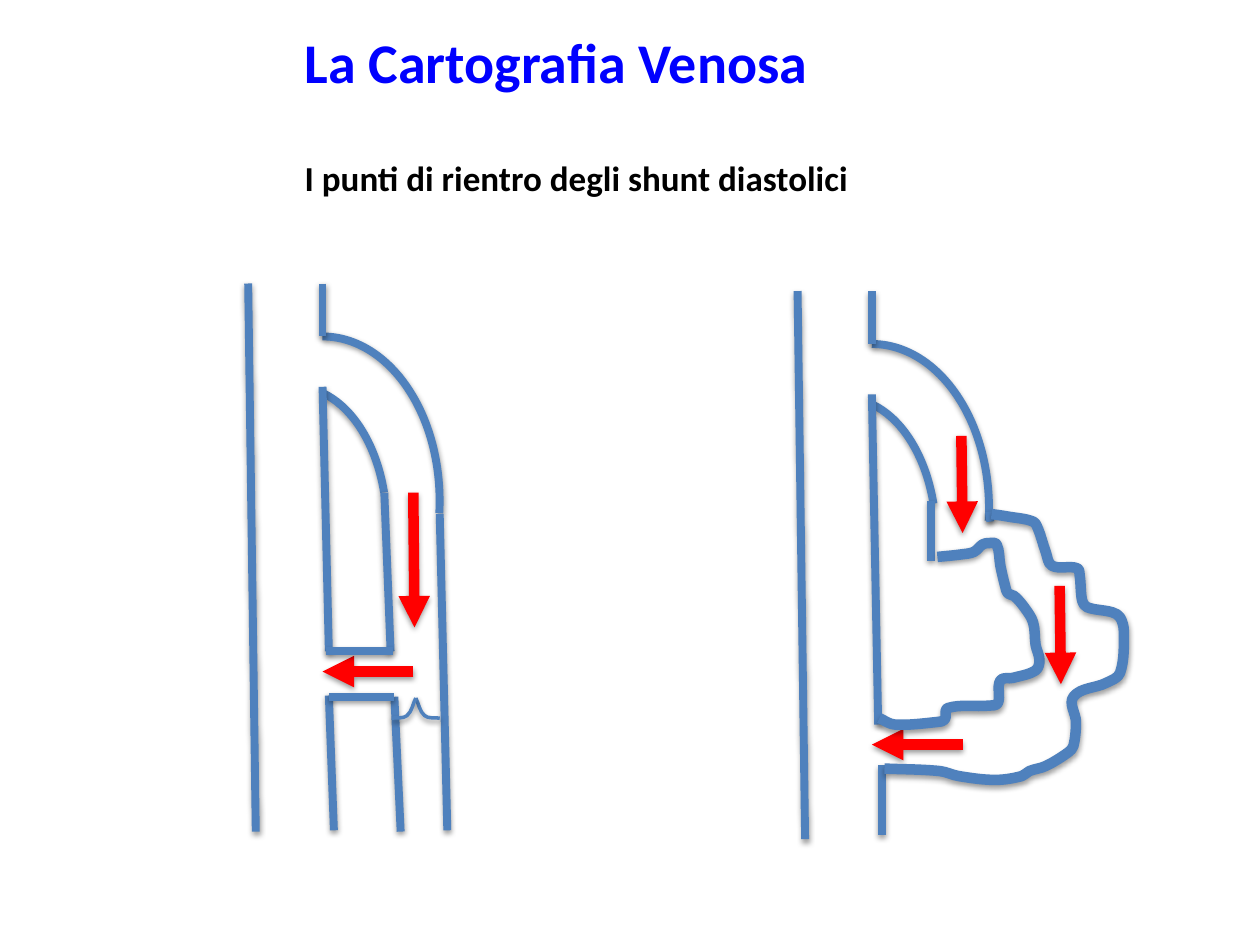
"""Build the slide on re-entry points of diastolic shunts in venous mapping."""
from dataclasses import dataclass
from itertools import chain
from math import dist
from typing import NamedTuple

from lxml import etree
from pptx import Presentation
from pptx.dml.color import RGBColor
from pptx.enum.shapes import MSO_CONNECTOR, MSO_SHAPE
from pptx.enum.text import MSO_AUTO_SIZE
from pptx.oxml import parse_xml
from pptx.oxml.ns import nsdecls, qn
from pptx.util import Inches, Pt

ARC = MSO_SHAPE.ARC
STRAIGHT = MSO_CONNECTOR.STRAIGHT
FIT_SHAPE = MSO_AUTO_SIZE.SHAPE_TO_FIT_TEXT
VEIN_BLUE = RGBColor(0x4F, 0x81, 0xBD)
FLOW_RED = RGBColor(0xFF, 0x00, 0x00)
TITLE_BLUE = RGBColor(0x00, 0x00, 0xFF)
BLACK = RGBColor(0x00, 0x00, 0x00)
WALL_WIDTH, THICK_WIDTH, VALVE_WIDTH = 4.5, 6, 2
SHADOW = (
    f'<a:effectLst {nsdecls("a")}><a:outerShdw blurRad="40000" dist="20000" '
    'dir="5400000" rotWithShape="0"><a:srgbClr val="000000">'
    '<a:alpha val="38000"/></a:srgbClr></a:outerShdw></a:effectLst>'
)


class Point(NamedTuple):
    x: float
    y: float


class Segment(NamedTuple):
    x1: float
    y1: float
    x2: float
    y2: float


@dataclass(frozen=True)
class Heading:
    text: str
    top: float
    width: float
    height: float
    size: int
    color: RGBColor


@dataclass(frozen=True)
class DeepVein:
    """A deep vein whose side branch leaves by an arch and re-enters lower down."""
    left: float
    top: float
    inner_arch_drop: float
    reentry_top: float
    lower_wall: Segment


HEADING_LEFT = 2.32
HEADINGS = [
    Heading("La Cartografia Venosa", 0.17, 4.27, 0.64, 32, TITLE_BLUE),
    Heading("I punti di rientro degli shunt diastolici", 1.19, 4.57, 0.44, 20, BLACK),
]

TRUNK_LENGTH, TRUNK_LEAN = 4.35, 0.06
LUMEN = 0.59
STUMP_LENGTH, MOUTH_BOTTOM = 0.42, 0.82
ARCH_OFFSET = -0.34
OUTER_ARCH_SIZE, OUTER_SWEEP = (1.86, 2.61), (162, 3.65)
INNER_ARCH_SIZE, INNER_SWEEP = (1.44, 2.21), (169.22, 203.44)
REENTRY_FLOW_DROP, REENTRY_FLOW_LENGTH = 0.16, 0.72

STRAIGHT_BRANCH_VEIN = DeepVein(1.97, 2.25, 0.82, 5.17, Segment(2.61, 5.52, 2.65, 6.59))
VARICOSE_BRANCH_VEIN = DeepVein(6.33, 2.31, 0.85, 5.75, Segment(7, 6.07, 7, 6.63))

STRAIGHT_BRANCH_WALLS = {
    "inner wall": Segment(3.05, 3.91, 3.1, 5.17),
    "outer wall": Segment(3.49, 4.08, 3.55, 6.59),
    "wall below perforator": Segment(3.13, 5.53, 3.18, 6.6),
    "perforator top": Segment(3.12, 5.17, 2.59, 5.17),
    "perforator bottom": Segment(3.13, 5.53, 2.61, 5.53),
}
VARICOSE_BRANCH_WALLS = {
    "inner wall": Segment(7.39, 3.98, 7.39, 4.45),
    "outer wall": Segment(7.86, 4.14, 7.85, 4.06),
}
VALVE_TIP = Point(3.3, 5.54)
CUSP_PROFILE = [Point(0, 0), Point(0.07, 0.14), Point(0.19, 0.16)]

VARIX_OUTER_WALL = {
    "shoulder": [(7.87, 4.08), (8, 4.1), (8.2, 4.14)],
    "first step": [(8.24, 4.2), (8.3, 4.38), (8.35, 4.49), (8.55, 4.51)],
    "second step": [(8.57, 4.57), (8.59, 4.77), (8.63, 4.82), (8.83, 4.86)],
    "widest bulge": [(8.89, 4.9), (8.92, 5.01), (8.89, 5.34), (8.78, 5.42)],
    "lower bulge": [(8.52, 5.53), (8.54, 5.73), (8.52, 5.92), (8.48, 5.97)],
    "floor": [(8.3, 6.08), (8.17, 6.12), (8.11, 6.16), (7.9, 6.19), (7.61, 6.16)],
    "re-entry": [(7.46, 6.12), (7.02, 6.1)],
}
VARIX_INNER_WALL = {
    "roof": [(7.44, 4.42), (7.63, 4.4), (7.73, 4.38), (7.8, 4.32), (7.85, 4.31), (7.91, 4.32)],
    "first step": [(7.94, 4.49), (7.98, 4.66), (8, 4.71), (8.05, 4.73)],
    "second step": [(8.13, 4.82), (8.2, 4.94), (8.22, 5.12)],
    "widest bulge": [(8.25, 5.24), (8.22, 5.32), (8.04, 5.38), (7.94, 5.4)],
    "lower bulge": [(7.92, 5.58), (7.85, 5.6), (7.52, 5.62), (7.5, 5.71)],
    "re-entry": [(7.44, 5.73), (7.1, 5.75), (6.98, 5.7)],
}


def downward_flow(x: float, top: float, length: float) -> Segment:
    return Segment(x, top, x + 0.01, top + length)


BRANCH_FLOWS = [
    downward_flow(3.28, 3.91, 1.07),
    downward_flow(7.63, 3.46, 0.77),
    downward_flow(8.41, 4.65, 0.78),
]


def style_stroke(stroke, color: RGBColor, width: float) -> None:
    stroke.line.color.rgb = color
    stroke.line.width = Pt(width)
    stroke.element.spPr.append(parse_xml(SHADOW))


def draw_heading(slide, heading: Heading) -> None:
    place = (HEADING_LEFT, heading.top, heading.width, heading.height)
    box = slide.shapes.add_textbox(*map(Inches, place))
    box.text_frame.word_wrap = False
    box.text_frame.auto_size = FIT_SHAPE
    paragraph = box.text_frame.paragraphs[0]
    paragraph.text = heading.text
    paragraph.font.name = "Calibri"
    paragraph.font.size = Pt(heading.size)
    paragraph.font.bold = True
    paragraph.font.color.rgb = heading.color


def draw_arch(slide, corner: Point, size: tuple, sweep: tuple) -> None:
    arch = slide.shapes.add_shape(ARC, *map(Inches, (*corner, *size)))
    arch.adjustments[0], arch.adjustments[1] = sweep
    arch.fill.background()
    style_stroke(arch, VEIN_BLUE, WALL_WIDTH)


def draw_segment(slide, segment: Segment, color: RGBColor = VEIN_BLUE, width: float = WALL_WIDTH):
    stroke = slide.shapes.add_connector(STRAIGHT, *map(Inches, segment))
    style_stroke(stroke, color, width)
    return stroke


def draw_flow(slide, segment: Segment) -> None:
    flow = draw_segment(slide, segment, FLOW_RED, THICK_WIDTH)
    etree.SubElement(flow.element.spPr.find(qn("a:ln")), qn("a:tailEnd"), type="triangle")


def handle(anchor: Point, before: Point, after: Point, reach: float) -> Point:
    """Return the control point at a signed reach along the tangent of an anchor."""
    scale = reach / dist(before, after)
    return Point(anchor.x + (after.x - before.x) * scale, anchor.y + (after.y - before.y) * scale)


def draw_smooth_wall(slide, anchors: list[Point], width: float) -> None:
    """Draw a curve through the anchors, each tangent parallel to its neighbours' chord."""
    padded = [anchors[0], *anchors, anchors[-1]]
    spans = list(zip(padded, padded[1:], padded[2:], padded[3:]))
    builder = slide.shapes.build_freeform(*map(Inches, anchors[0]))
    for before, start, end, after in spans:
        reach = dist(start, end) / 3
        controls = (handle(start, before, end, reach), handle(end, start, after, -reach), end)
        builder.add_line_segments([tuple(map(Inches, p)) for p in controls], close=False)
    wall = builder.convert_to_shape()
    steps = list(wall.element.iter(qn("a:lnTo")))
    for triple in zip(steps[::3], steps[1::3], steps[2::3]):
        bezier = etree.Element(qn("a:cubicBezTo"))
        triple[0].addprevious(bezier)
        for step in triple:
            bezier.append(step[0])
            step.getparent().remove(step)
    wall.fill.background()
    style_stroke(wall, VEIN_BLUE, width)


def draw_deep_vein(slide, vein: DeepVein) -> None:
    left, top = vein.left, vein.top
    branch_side = left + LUMEN
    mouth_bottom = top + MOUTH_BOTTOM
    arch_left = left + ARCH_OFFSET
    draw_arch(slide, Point(arch_left, top + STUMP_LENGTH), OUTER_ARCH_SIZE, OUTER_SWEEP)
    draw_arch(slide, Point(arch_left, top + vein.inner_arch_drop), INNER_ARCH_SIZE, INNER_SWEEP)
    draw_segment(slide, Segment(left, top, left + TRUNK_LEAN, top + TRUNK_LENGTH))
    draw_segment(slide, Segment(branch_side, top, branch_side, top + STUMP_LENGTH))
    draw_segment(slide, Segment(branch_side, mouth_bottom, branch_side + 0.05, vein.reentry_top))
    draw_segment(slide, vein.lower_wall)
    flow_y = vein.reentry_top + REENTRY_FLOW_DROP
    draw_flow(slide, Segment(branch_side + REENTRY_FLOW_LENGTH, flow_y, branch_side, flow_y))


def main() -> None:
    deck = Presentation()
    deck.slide_width, deck.slide_height = Inches(10), Inches(7.5)
    slide = deck.slides.add_slide(deck.slide_layouts[6])
    for heading in HEADINGS:
        draw_heading(slide, heading)
    for vein in (STRAIGHT_BRANCH_VEIN, VARICOSE_BRANCH_VEIN):
        draw_deep_vein(slide, vein)
    for wall in chain(STRAIGHT_BRANCH_WALLS.values(), VARICOSE_BRANCH_WALLS.values()):
        draw_segment(slide, wall)
    for side in (1, -1):
        cusp = [Point(VALVE_TIP.x + side * x, VALVE_TIP.y + y) for x, y in CUSP_PROFILE]
        draw_smooth_wall(slide, cusp, VALVE_WIDTH)
    for stretches in (VARIX_OUTER_WALL, VARIX_INNER_WALL):
        anchors = [Point(*place) for place in chain.from_iterable(stretches.values())]
        draw_smooth_wall(slide, anchors, THICK_WIDTH)
    for flow in BRANCH_FLOWS:
        draw_flow(slide, flow)
    deck.save("out.pptx")


if __name__ == "__main__":
    main()
